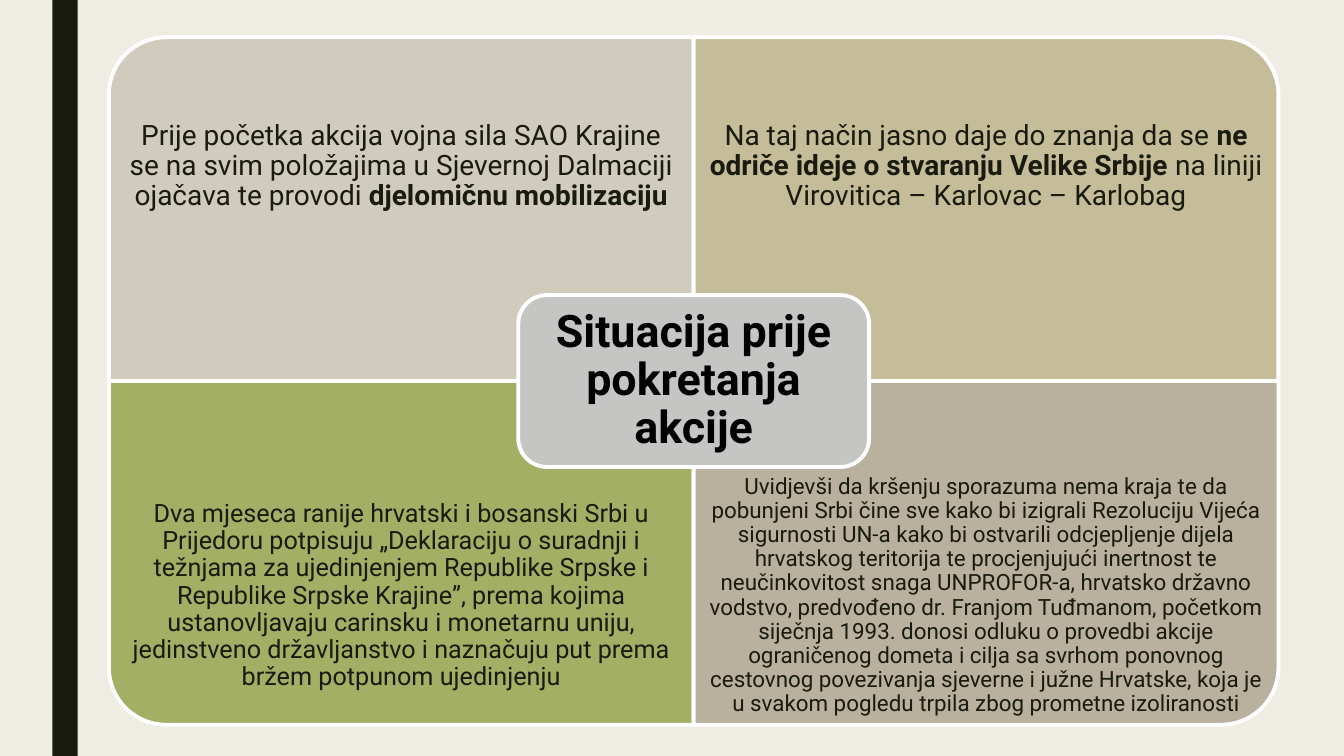
from dataclasses import dataclass

from pptx import Presentation
from pptx.dml.color import RGBColor
from pptx.enum.shapes import MSO_SHAPE
from pptx.enum.text import MSO_ANCHOR, MSO_AUTO_SIZE, PP_ALIGN
from pptx.util import Inches, Pt

RECT, ROUNDED = MSO_SHAPE.RECTANGLE, MSO_SHAPE.ROUNDED_RECTANGLE
ONE_ROUND_CORNER = MSO_SHAPE.ROUND_1_RECTANGLE
MIDDLE, CENTER = MSO_ANCHOR.MIDDLE, PP_ALIGN.CENTER

# Content: (column, row, rotation, fill, type size, inset, [(text, bold)])
HEADING = [("Situacija prije pokretanja akcije", True)]
QUADRANTS = [
    (0, 0, 270, "D1CBBE", 20, 0.16, [
        ("Prije početka akcija vojna sila SAO Krajine se na svim položajima u "
         "Sjevernoj Dalmaciji ojačava te provodi ", False),
        ("djelomičnu mobilizaciju", True)]),
    (1, 0, 0, "C5BD99", 20, 0.16, [
        ("Na taj način jasno daje do znanja da se ", False),
        ("ne odriče ideje o stvaranju Velike Srbije", True),
        (" na liniji Virovitica – Karlovac – Karlobag", False)]),
    (0, 1, 180, "A3AF65", 18, 0.14, [
        ("Dva mjeseca ranije hrvatski i bosanski Srbi u Prijedoru potpisuju "
         "„Deklaraciju o suradnji i težnjama za ujedinjenjem Republike Srpske i "
         "Republike Srpske Krajine”, prema kojima ustanovljavaju carinsku i "
         "monetarnu uniju, jedinstveno državljanstvo i naznačuju put prema "
         "bržem potpunom ujedinjenju", False)]),
    (1, 1, 90, "BAB09E", 16, 0.12, [
        ("Uvidjevši da kršenju sporazuma nema kraja te da pobunjeni Srbi čine "
         "sve kako bi izigrali Rezoluciju Vijeća sigurnosti UN-a kako bi "
         "ostvarili odcjepljenje dijela hrvatskog teritorija te procjenjujući "
         "inertnost te neučinkovitost snaga UNPROFOR-a, hrvatsko državno "
         "vodstvo, predvođeno dr. Franjom Tuđmanom, početkom siječnja 1993. "
         "donosi odluku o provedbi akcije ograničenog dometa i cilja sa svrhom "
         "ponovnog cestovnog povezivanja sjeverne i južne Hrvatske, koja je u "
         "svakom pogledu trpila zbog prometne izoliranosti", False)]),
]


@dataclass(frozen=True)
class Theme:
    font: str = "Roboto"
    background: str = "EFEDE3"
    dark: str = "191B0E"
    heading_fill: str = "C5C5C3"
    heading_text: str = "000000"
    outline: str = "FFFFFF"
    outline_width: float = 2.75
    heading_size: int = 32
    line_spacing: float = 0.9


THEME = Theme()

# Grid, in inches
SLIDE_W, SLIDE_H = 13.33, 7.5
GRID_X, GRID_Y = 1.08, 0.37
CELL_W, CELL_H = 5.8, 3.41
CENTER_X, CENTER_Y = GRID_X + CELL_W, GRID_Y + CELL_H
TEXT_H = 0.75 * CELL_H
HEADING_W, HEADING_H = 0.6 * CELL_W, 0.5 * CELL_H
HEADING_MARGIN = 0.08


def centered(x, y, width, height):
    return x - width / 2, y - height / 2, width, height


def add_panel(slide, preset, box, fill, outlined=True):
    panel = slide.shapes.add_shape(preset, *map(Inches, box))
    panel.shadow.inherit = False
    panel.fill.solid()
    panel.fill.fore_color.rgb = RGBColor.from_string(fill)
    if outlined:
        panel.line.color.rgb = RGBColor.from_string(THEME.outline)
        panel.line.width = Pt(THEME.outline_width)
    else:
        panel.line.fill.background()
    return panel


def write(frame, parts, size, color, inset):
    frame.word_wrap = True
    frame.auto_size = MSO_AUTO_SIZE.NONE
    frame.vertical_anchor = MIDDLE
    frame.margin_left = frame.margin_right = Inches(inset)
    frame.margin_top = frame.margin_bottom = Inches(inset)
    paragraph = frame.paragraphs[0]
    paragraph.alignment = CENTER
    paragraph.line_spacing = THEME.line_spacing
    for text, bold in parts:
        run = paragraph.add_run()
        run.text = text
        run.font.name = THEME.font
        run.font.size = Pt(size)
        run.font.bold = bold
        run.font.color.rgb = RGBColor.from_string(color)


def main():
    deck = Presentation()
    deck.slide_width, deck.slide_height = Inches(SLIDE_W), Inches(SLIDE_H)
    slide = deck.slides.add_slide(deck.slide_layouts[5])
    slide.background.fill.solid()
    slide.background.fill.fore_color.rgb = RGBColor.from_string(THEME.background)

    # Side bar
    add_panel(slide, RECT, (0.52, 0, 0.25, SLIDE_H), THEME.dark, outlined=False)

    # Quadrants, each turned so its round corner faces outwards
    for column, row, rotation, fill, size, inset, parts in QUADRANTS:
        x, y = GRID_X + column * CELL_W, GRID_Y + row * CELL_H
        sides = (CELL_H, CELL_W) if rotation % 180 else (CELL_W, CELL_H)
        box = centered(x + CELL_W / 2, y + CELL_H / 2, *sides)
        add_panel(slide, ONE_ROUND_CORNER, box, fill).rotation = rotation

        text_y = y + row * (CELL_H - TEXT_H)
        caption = slide.shapes.add_textbox(*map(Inches, (x, text_y, CELL_W, TEXT_H)))
        write(caption.text_frame, parts, size, THEME.dark, inset)

    # Heading card with the title on top of it
    add_panel(slide, ROUNDED, centered(CENTER_X, CENTER_Y, HEADING_W, HEADING_H),
              THEME.heading_fill)
    heading = slide.shapes.title
    heading.left, heading.top, heading.width, heading.height = map(Inches, centered(
        CENTER_X, CENTER_Y, HEADING_W - 2 * HEADING_MARGIN, HEADING_H - 2 * HEADING_MARGIN))
    write(heading.text_frame, HEADING, THEME.heading_size, THEME.heading_text, 0.13)
    slide.shapes.element.append(heading.element)

    deck.save("out.pptx")


if __name__ == "__main__":
    main()
